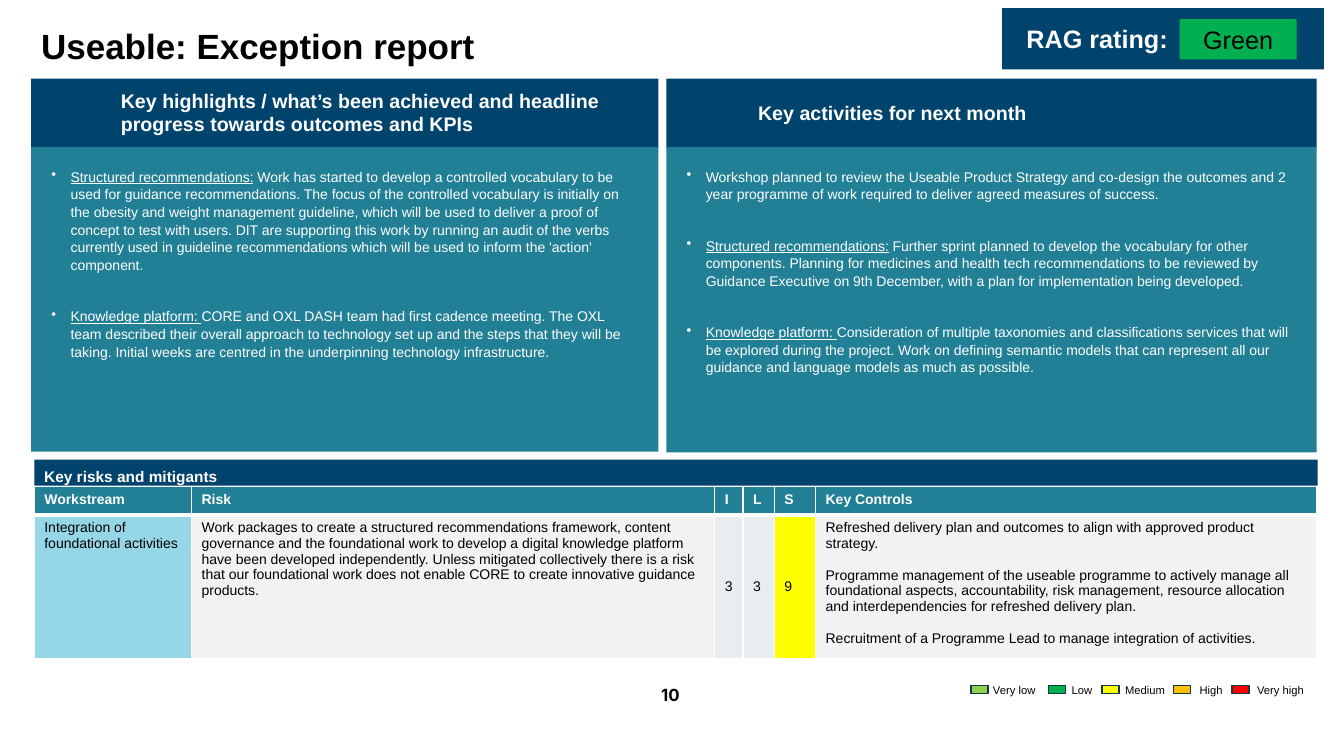
from lxml.etree import SubElement
from pptx import Presentation
from pptx.dml.color import RGBColor
from pptx.enum.shapes import MSO_SHAPE
from pptx.enum.text import MSO_ANCHOR, PP_ALIGN
from pptx.oxml.ns import qn
from pptx.util import Inches, Pt

COLOURS = {
    "white": "FFFFFF", "black": "000000", "navy": "00436C", "teal": "228096",
    "green": "00B050", "lime": "92D050", "yellow": "FFFF00", "amber": "FFC000",
    "red": "FF0000", "outline": "0F3842", "sky": "95D7E7", "pale": "F2F2F2",
    "grey": "E8EDEF",
}

HIGHLIGHTS = [
    ("Structured recommendations:", " Work has started to develop a controlled vocabulary to be used for guidance recommendations. The focus of the controlled vocabulary is initially on the obesity and weight management guideline, which will be used to deliver a proof of concept to test with users. DIT are supporting this work by running an audit of the verbs currently used in guideline recommendations which will be used to inform the 'action' component."),
    ("Knowledge platform: ", "CORE and OXL DASH team had first cadence meeting. The OXL team described their overall approach to technology set up and the steps that they will be taking. Initial weeks are centred in the underpinning technology infrastructure."),
]
ACTIVITIES = [
    ("", "Workshop planned to review the Useable Product Strategy and co-design the outcomes and 2 year programme of work required to deliver agreed measures of success."),
    ("Structured recommendations:", " Further sprint planned to develop the vocabulary for other components. Planning for medicines and health tech recommendations to be reviewed by Guidance Executive on 9th December, with a plan for implementation being developed."),
    ("Knowledge platform: ", "Consideration of multiple taxonomies and classifications services that will be explored during the project. Work on defining semantic models that can represent all our guidance and language models as much as possible."),
]
RISK_COLUMNS = [
    ("Workstream", 1.56, "sky", ["Integration of foundational activities"]),
    ("Risk", 5.19, "pale", ["Work packages to create a structured recommendations framework, content governance and the foundational work to develop a digital knowledge platform have been developed independently. Unless mitigated collectively there is a risk that our foundational work does not enable CORE to create innovative guidance products."]),
    ("I", 0.28, "grey", ["3"]),
    ("L", 0.31, "grey", ["3"]),
    ("S", 0.41, "yellow", ["9"]),
    ("Key Controls", 4.97, "pale", [
        "Refreshed delivery plan and outcomes to align with approved product strategy.",
        "Programme management of the useable programme to actively manage all foundational aspects, accountability, risk management, resource allocation and interdependencies for refreshed delivery plan.",
        "Recruitment of a Programme Lead to manage integration of activities.",
    ]),
]
LEGEND = [
    ("Very low", "lime", 9.63, 9.75), ("Low", "green", 10.4, 10.53),
    ("Medium", "yellow", 10.93, 11.06), ("High", "amber", 11.64, 11.8),
    ("Very high", "red", 12.22, 12.37),
]


def colour(name):
    """Return the named colour."""
    return RGBColor.from_string(COLOURS[name])


def style(paragraph, size, font_colour, bold=False, name="Arial"):
    """Set the font of a paragraph."""
    font = paragraph.font
    font.name, font.size, font.bold = name, Pt(size), bold
    font.color.rgb = colour(font_colour)


def add_label(slide, box, text, size, font_colour="black", bold=False,
              align=PP_ALIGN.LEFT, name="Arial"):
    """Add a wrapped text box with one paragraph."""
    frame = slide.shapes.add_textbox(*map(Inches, box)).text_frame
    frame.word_wrap = True
    paragraph = frame.paragraphs[0]
    paragraph.text, paragraph.alignment = text, align
    style(paragraph, size, font_colour, bold, name)


def add_block(slide, box, fill, line=None):
    """Add a flat rectangle."""
    shape = slide.shapes.add_shape(MSO_SHAPE.RECTANGLE, *map(Inches, box))
    shape.shadow.inherit = False
    shape.fill.solid()
    shape.fill.fore_color.rgb = colour(fill)
    if line:
        shape.line.color.rgb = colour(line)
        shape.line.width = Pt(1)
    else:
        shape.line.fill.background()
    return shape


def add_badge(slide, box, fill, text, font_colour, bold, align, left_inset):
    """Add a rectangle with one line of text."""
    frame = add_block(slide, box, fill).text_frame
    frame.margin_left = Inches(left_inset)
    frame.vertical_anchor = MSO_ANCHOR.MIDDLE
    paragraph = frame.paragraphs[0]
    paragraph.text, paragraph.alignment = text, align
    style(paragraph, 18, font_colour, bold)


def add_bullets(slide, box, items):
    """Add a teal panel of bullets with underlined lead-ins."""
    frame = add_block(slide, box, "teal").text_frame
    frame.word_wrap = True
    frame.vertical_anchor = MSO_ANCHOR.TOP
    frame.margin_left = frame.margin_right = Inches(0.2)
    frame.margin_top = frame.margin_bottom = Inches(0.2)
    for index, (lead, body) in enumerate(items):
        paragraph = frame.add_paragraph() if index else frame.paragraphs[0]
        paragraph.alignment = PP_ALIGN.LEFT
        paragraph.line_spacing = 1.05
        paragraph.space_before = Pt(24 if index else 0)
        properties = paragraph._p.get_or_add_pPr()
        properties.set("marL", str(Inches(0.19)))
        properties.set("indent", str(-Inches(0.19)))
        SubElement(properties, qn("a:buChar"), char="•")
        style(paragraph, 10, "white")
        if lead:
            run = paragraph.add_run()
            run.text, run.font.underline = lead, True
        paragraph.add_run().text = body


def set_borders(cell, bottom_width):
    """Give a cell white borders."""
    properties = cell._tc.get_or_add_tcPr()
    widths = {"lnL": 1, "lnR": 1, "lnT": 1, "lnB": bottom_width}
    for position, (side, width) in enumerate(widths.items()):
        line = SubElement(properties, qn(f"a:{side}"), w=str(Pt(width)))
        fill = SubElement(line, qn("a:solidFill"))
        SubElement(fill, qn("a:srgbClr"), val=COLOURS["white"])
        properties.insert(position, line)


def fill_cell(cell, texts, fill, font_colour, bold, bottom_width):
    """Write and format one table cell."""
    cell.fill.solid()
    cell.fill.fore_color.rgb = colour(fill)
    cell.text = "\n".join(texts)
    for index, paragraph in enumerate(cell.text_frame.paragraphs):
        paragraph.space_before = Pt(11.5 if index else 0)
        style(paragraph, 10, font_colour, bold)
    set_borders(cell, bottom_width)


def add_risk_table(slide):
    """Add the table of risks and controls."""
    box = map(Inches, (0.34, 4.83, 12.72, 1.7))
    table = slide.shapes.add_table(2, len(RISK_COLUMNS), *box).table
    for row, height in zip(table.rows, (0.28, 1.42)):
        row.height = Inches(height)
    for index, (heading, width, fill, texts) in enumerate(RISK_COLUMNS):
        table.columns[index].width = Inches(width)
        fill_cell(table.cell(0, index), [heading], "teal", "white", True, 3)
        cell = table.cell(1, index)
        fill_cell(cell, texts, fill, "black", False, 1)
        if heading in ("I", "L", "S"):
            cell.vertical_anchor = MSO_ANCHOR.MIDDLE


def main():
    """Build the slide and save it."""
    presentation = Presentation()
    presentation.slide_width = Inches(13.33)
    presentation.slide_height = Inches(7.5)
    slide = presentation.slides.add_slide(presentation.slide_layouts[6])

    add_label(slide, (0.31, 0.19, 9.5, 0.55), "Useable: Exception report", 25, bold=True)
    add_badge(slide, (9.94, 0.08, 3.19, 0.61), "navy", "RAG rating:", "white", True, PP_ALIGN.LEFT, 0.24)
    add_badge(slide, (11.7, 0.19, 1.16, 0.4), "green", "Green", "black", False, PP_ALIGN.CENTER, 0.1)

    add_block(slide, (0.31, 0.78, 6.22, 0.69), "navy")
    add_block(slide, (6.61, 0.78, 6.45, 0.69), "navy")
    add_label(slide, (1.1, 0.83, 5.41, 0.57), "Key highlights / what’s been achieved and headline progress towards outcomes and KPIs", 14, "white", True)
    add_label(slide, (7.42, 0.95, 3.58, 0.34), "Key activities for next month", 14, "white", True)
    add_bullets(slide, (0.31, 1.46, 6.22, 3.02), HIGHLIGHTS)
    add_bullets(slide, (6.61, 1.46, 6.45, 3.03), ACTIVITIES)

    add_block(slide, (0.34, 4.56, 12.73, 0.26), "navy")
    add_label(slide, (0.34, 4.58, 4.4, 0.29), "Key risks and mitigants", 11, "white", True)
    add_risk_table(slide)

    for text, fill, swatch_left, label_left in LEGEND:
        add_block(slide, (swatch_left, 6.8, 0.17, 0.08), fill, "outline")
        add_label(slide, (label_left, 6.73, 0.7, 0.24), text, 8)
    add_label(slide, (5.15, 6.74, 3, 0.4), "10", 12, "black", True, PP_ALIGN.CENTER, "Inter")
    presentation.save("out.pptx")


if __name__ == "__main__":
    main()
